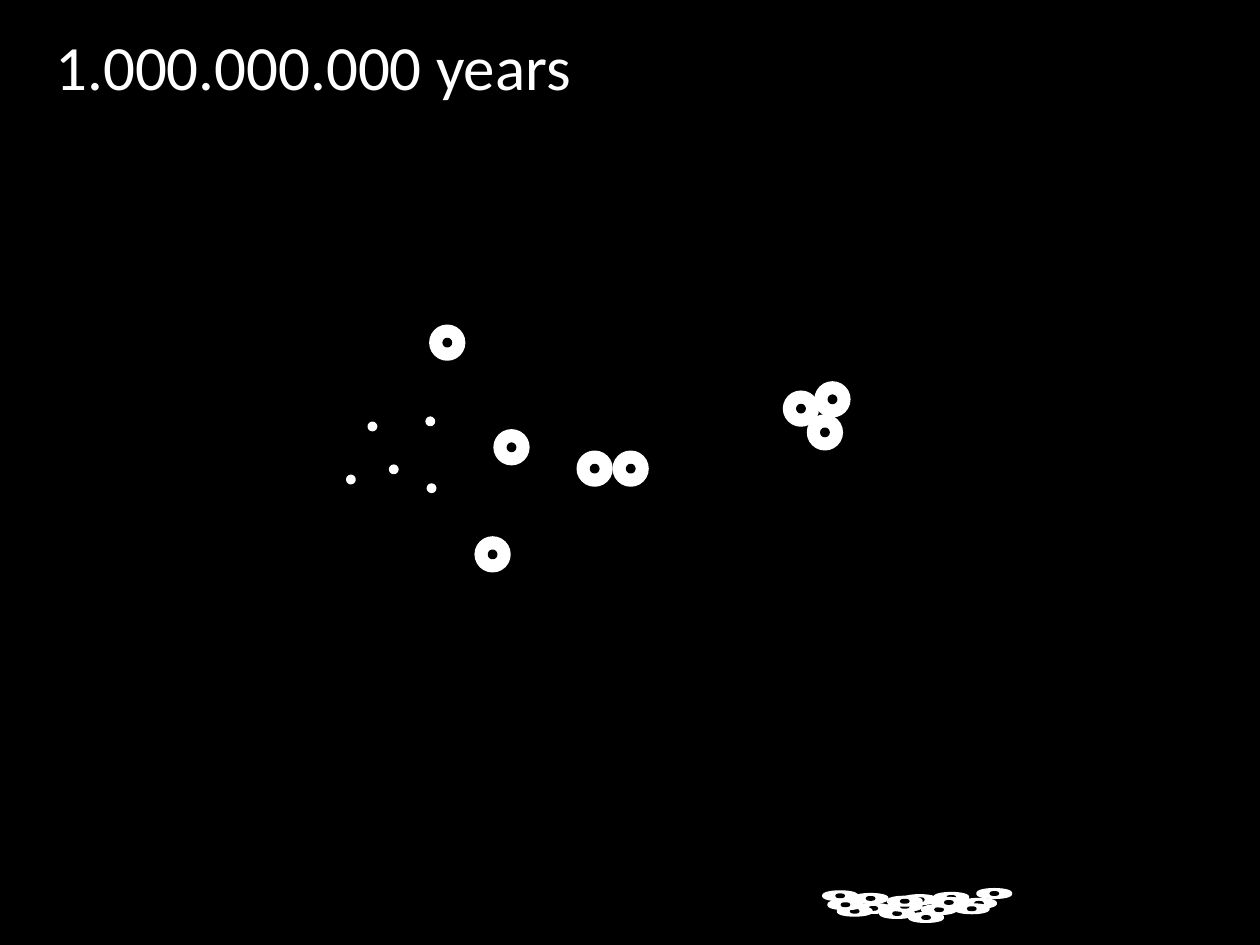
from pptx import Presentation
from pptx.dml.color import RGBColor
from pptx.enum.shapes import MSO_SHAPE as SHAPE
from pptx.enum.text import MSO_ANCHOR as ANCHOR, PP_ALIGN as ALIGN
from pptx.util import Pt

BLACK = RGBColor(0, 0, 0)
WHITE = RGBColor(255, 255, 255)

DOT = (3.6, 3.6)
ROUND_CELL = (18.7, 18.7)
FLAT_CELL = (18.7, 4.3)
FLAT_NUCLEUS = (3.6, 0.7)

DOTS = [(225, 268.2), (245.9, 240.8), (200.5, 274), (212.8, 243.7), (246.6, 279)]
FREE_CELLS = [(292.3, 255.6), (339.8, 267.8), (255.6, 195.8), (281.5, 316.8),
              (360.4, 267.8)]
CLUSTER = [(457.7, 233.5), (471.4, 247.1), (475.7, 228.2)]
SEDIMENT = [(499, 519.1), (512.6, 522), (517, 517.9), (525.6, 514.1),
            (543.6, 512.8), (559.4, 516.2), (536.6, 519.8), (529.2, 524.3),
            (542.2, 515.7), (555.3, 519.3), (568.2, 510.6), (488.4, 520.7),
            (483.1, 517), (497.5, 513.4), (517, 515), (480.1, 511.9)]


def paint(s, color):
    """Give a shape one colour for fill and outline."""
    s.fill.solid()
    s.fill.fore_color.rgb = color
    s.line.color.rgb = color
    s.line.width = Pt(2)


def add_ellipse(shapes, center, size, color):
    """Add an ellipse around its centre."""
    (x, y), (w, h) = center, size
    s = shapes.add_shape(SHAPE.OVAL, Pt(x - w / 2), Pt(y - h / 2), Pt(w), Pt(h))
    s.shadow.inherit = False
    paint(s, color)


def add_cells(shapes, centers, size, nucleus):
    """Add white cells, each with a black nucleus."""
    for center in centers:
        add_ellipse(shapes, center, size, WHITE)
        add_ellipse(shapes, center, nucleus, BLACK)


def set_title(s, text):
    """Place and format the title."""
    s.left, s.top, s.width, s.height = Pt(24.5), Pt(21.6), Pt(332), Pt(31.7)
    paint(s, BLACK)
    tf = s.text_frame
    tf.word_wrap = True
    tf.vertical_anchor = ANCHOR.MIDDLE
    p = tf.paragraphs[0]
    p.alignment = ALIGN.LEFT
    r = p.add_run()
    r.text = text
    r.font.name = "Calibri"
    r.font.size = Pt(36)
    r.font.color.rgb = WHITE


def main():
    """Build and save the slide."""
    prs = Presentation()
    prs.slide_width, prs.slide_height = Pt(720), Pt(540)
    slide = prs.slides.add_slide(prs.slide_layouts[5])
    slide.background.fill.solid()
    slide.background.fill.fore_color.rgb = BLACK
    set_title(slide.shapes.title, "1.000.000.000 years")

    free = slide.shapes.add_group_shape().shapes
    for center in DOTS:
        add_ellipse(free, center, DOT, WHITE)
    add_cells(free, FREE_CELLS, ROUND_CELL, DOT)
    for center in CLUSTER:
        add_cells(slide.shapes.add_group_shape().shapes, [center], ROUND_CELL, DOT)
    add_cells(slide.shapes.add_group_shape().shapes, SEDIMENT, FLAT_CELL, FLAT_NUCLEUS)
    prs.save("out.pptx")


if __name__ == "__main__":
    main()
